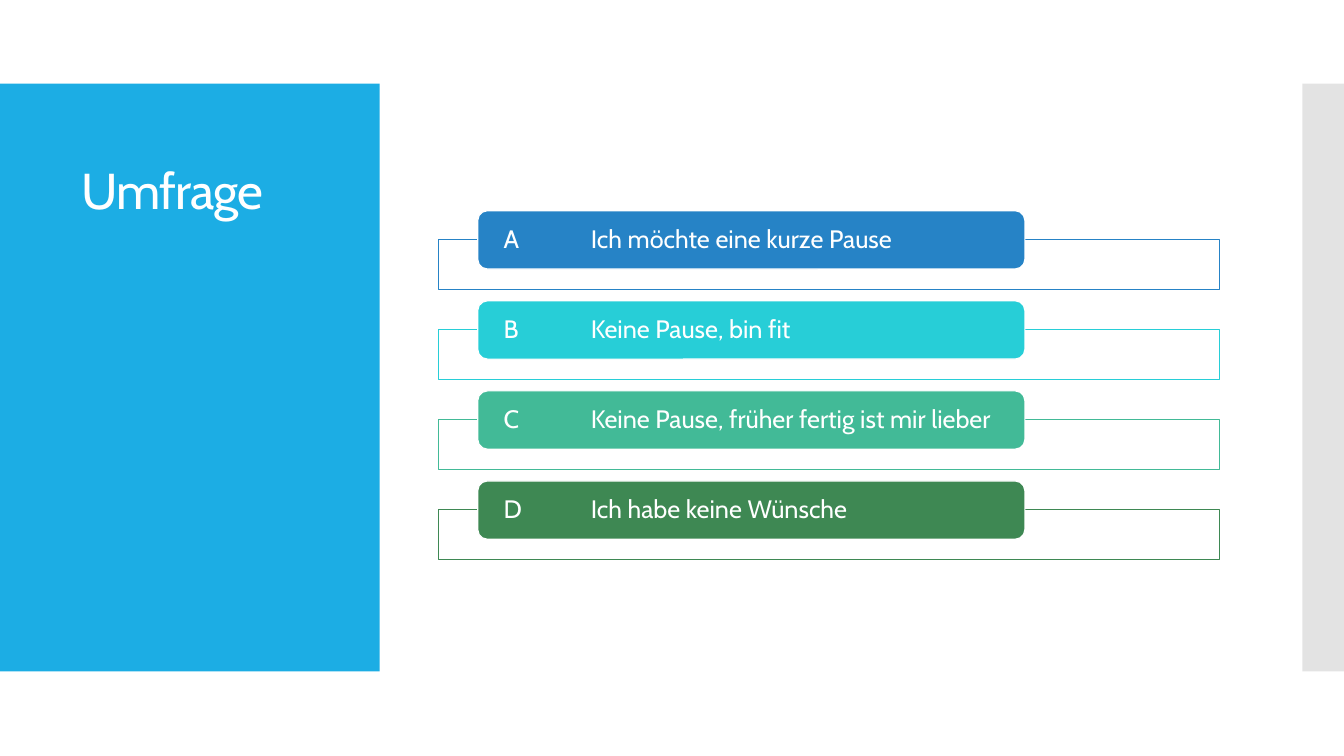
from dataclasses import dataclass

from lxml.etree import SubElement
from pptx import Presentation
from pptx.dml.color import RGBColor
from pptx.enum.shapes import MSO_SHAPE as Shape
from pptx.enum.text import MSO_ANCHOR as Anchor, MSO_AUTO_SIZE as AutoSize, PP_ALIGN as Align
from pptx.oxml.ns import qn
from pptx.util import Cm, Pt


@dataclass(frozen=True)
class Theme:
    font: str = "Cabin"
    white: str = "FFFFFF"
    panel: str = "1CADE4"
    edge: str = "C8C8C8"
    title_size: float = 36
    label_size: float = 18
    line_width: float = 0.85


THEME = Theme()

# letter, answer, colour
ANSWERS = [
    ("A", "Ich möchte eine kurze Pause", "2683C6"),
    ("B", "Keine Pause, bin fit", "27CED7"),
    ("C", "Keine Pause, früher fertig ist mir lieber", "42BA97"),
    ("D", "Ich habe keine Wünsche", "3E8853"),
]
FIRST_LABEL_TOP = 5.31
FRAME_OFFSET = 0.72
ROW_PITCH = 2.27


def add_box(slide, kind, left, top, width, height, fill, line=None, opacity=100):
    shape = slide.shapes.add_shape(kind, Cm(left), Cm(top), Cm(width), Cm(height))
    shape.shadow.inherit = False
    shape.fill.solid()
    shape.fill.fore_color.rgb = RGBColor.from_string(fill)
    if opacity < 100:
        color = shape.element.spPr.find(qn("a:solidFill"))[0]
        SubElement(color, qn("a:alpha"), val=str(opacity * 1000))
    if line:
        shape.line.color.rgb = RGBColor.from_string(line)
        shape.line.width = Pt(THEME.line_width)
    else:
        shape.line.fill.background()
    return shape


def add_tab_stop(paragraph, position):
    tabs = SubElement(paragraph._p.get_or_add_pPr(), qn("a:tabLst"))
    SubElement(tabs, qn("a:tab"), pos=str(Cm(position)), algn="l")


def format_text(paragraph, size):
    paragraph.alignment = Align.LEFT
    paragraph.line_spacing = 0.9
    for run in paragraph.runs:
        run.font.name = THEME.font
        run.font.size = Pt(size)
        run.font.color.rgb = RGBColor.from_string(THEME.white)


def add_panels(slide):
    """Put the two side panels behind the title."""
    for left, width, color, opacity in ((0, 9.57, THEME.panel, 100), (32.82, 1.05, THEME.edge, 50)):
        panel = add_box(slide, Shape.RECTANGLE, left, 2.11, width, 14.81, color, opacity=opacity)
        slide.shapes.title.element.addprevious(panel.element)


def set_title(slide, text):
    title = slide.shapes.title
    title.left, title.top, title.width, title.height = Cm(1.8), Cm(4.06), Cm(10.54), Cm(7.47)
    frame = title.text_frame
    frame.text = text
    frame.auto_size = AutoSize.NONE
    frame.vertical_anchor = Anchor.TOP
    paragraph = frame.paragraphs[0]
    format_text(paragraph, THEME.title_size)
    paragraph.runs[0].font._element.set("spc", "-60")


def add_answer(slide, top, letter, answer, color):
    add_box(slide, Shape.RECTANGLE, 11.05, top + FRAME_OFFSET, 19.69, 1.26,
            THEME.white, line=color, opacity=90)
    label = add_box(slide, Shape.ROUNDED_RECTANGLE, 12.04, top, 13.79, 1.47,
                    color, line=THEME.white)
    frame = label.text_frame
    frame.word_wrap = True
    frame.vertical_anchor = Anchor.MIDDLE
    frame.margin_left = frame.margin_right = Cm(0.58)
    frame.margin_top = frame.margin_bottom = 0
    frame.text = f"{letter}\t{answer}"
    paragraph = frame.paragraphs[0]
    add_tab_stop(paragraph, 2.2)
    format_text(paragraph, THEME.label_size)


def main():
    presentation = Presentation()
    presentation.slide_width, presentation.slide_height = Cm(33.87), Cm(19.05)
    slide = presentation.slides.add_slide(presentation.slide_layouts.get_by_name("Title Only"))
    add_panels(slide)
    set_title(slide, "Umfrage")
    for row, (letter, answer, color) in enumerate(ANSWERS):
        add_answer(slide, FIRST_LABEL_TOP + row * ROW_PITCH, letter, answer, color)
    presentation.save("out.pptx")


if __name__ == "__main__":
    main()
